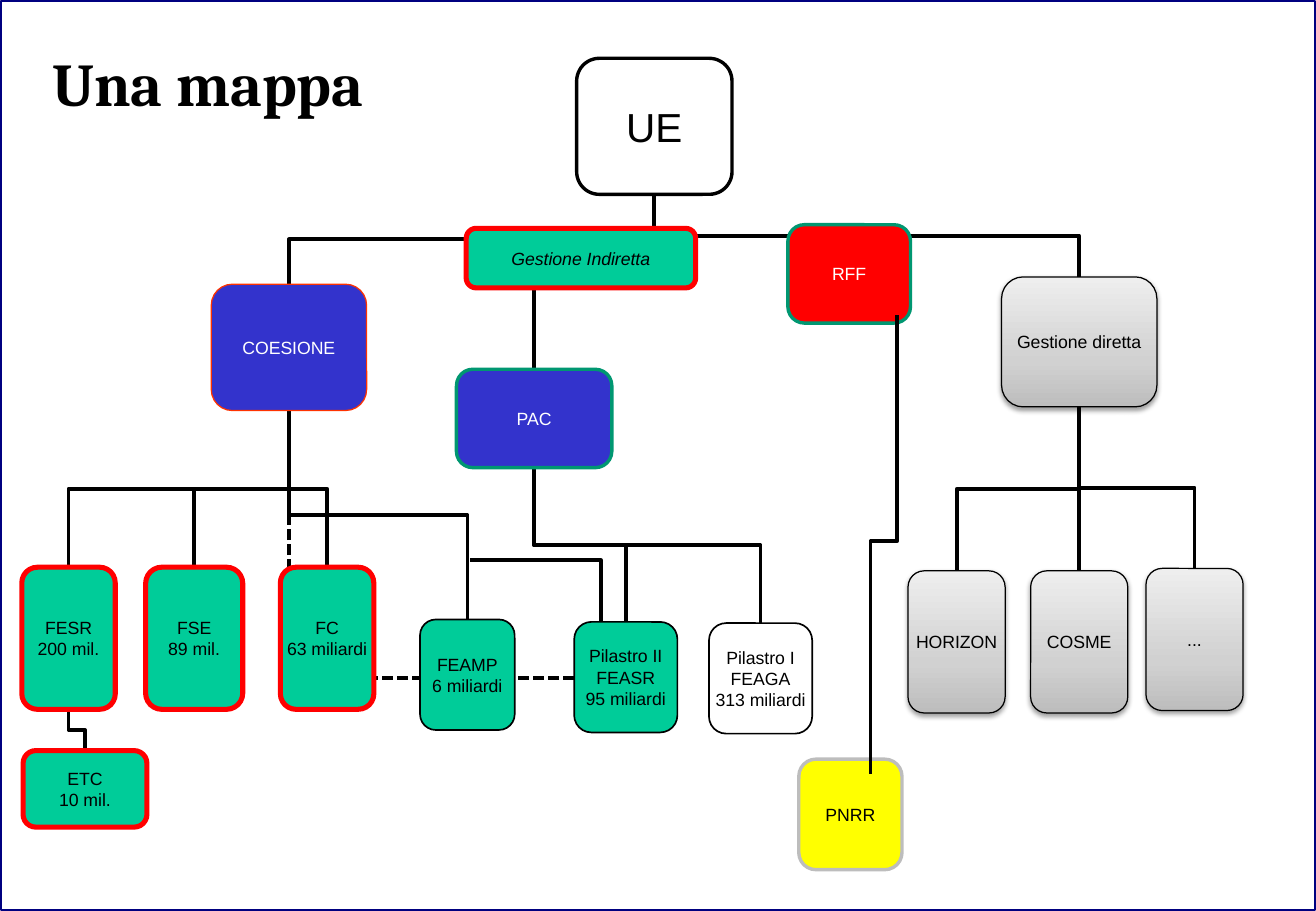
from copy import deepcopy
from dataclasses import dataclass

from lxml.etree import SubElement
from pptx import Presentation
from pptx.dml.color import RGBColor
from pptx.enum.dml import MSO_LINE
from pptx.enum.shapes import MSO_CONNECTOR, MSO_SHAPE
from pptx.enum.text import MSO_ANCHOR, MSO_AUTO_SIZE, PP_ALIGN
from pptx.oxml.ns import qn
from pptx.util import Inches, Pt


@dataclass(frozen=True)
class Theme:
    black: str = "000000"
    white: str = "FFFFFF"
    blue: str = "3333CC"
    green: str = "00CC99"
    teal: str = "009771"
    red: str = "FF0000"
    orange: str = "FF3300"
    yellow: str = "FFFF00"
    silver: str = "BDBDBD"
    navy: str = "000080"
    gradient: tuple = ((0, "BDBDBD"), (0.35, "D1D1D1"), (1, "EEEEEE"))
    title_font: str = "Cambria"
    body_font: str = "Arial"
    title_size: float = 36
    root_size: float = 24
    body_size: float = 10.5
    connector_width: float = 2.25


THEME = Theme()


@dataclass(frozen=True)
class Style:
    fill: str | tuple
    line: str
    width: float
    color: str = THEME.black
    size: float = THEME.body_size
    italic: bool = False


ROOT = Style(THEME.white, THEME.black, 2, size=THEME.root_size)
COHESION = Style(THEME.blue, THEME.orange, 0.75, THEME.white)
FARM_POLICY = Style(THEME.blue, THEME.teal, 2, THEME.white)
RECOVERY = Style(THEME.red, THEME.teal, 2, THEME.white)
RECOVERY_PLAN = Style(THEME.yellow, THEME.silver, 2)
DIRECT = Style(THEME.gradient, THEME.black, 0.75)
FUND = Style(THEME.green, THEME.red, 3)
INDIRECT = Style(THEME.green, THEME.red, 3, italic=True)
RURAL_FUND = Style(THEME.green, THEME.black, 1)
FARM_FUND = Style(THEME.white, THEME.black, 1)


@dataclass(frozen=True)
class Node:
    text: str
    left: float
    top: float
    width: float
    height: float
    style: Style
    parent: str = ""

    @property
    def head(self):
        return self.left + self.width / 2, self.top

    @property
    def foot(self):
        return self.left + self.width / 2, self.top + self.height


NODES = {
    "ue": Node("UE", 4.75, 0.48, 1.28, 1.12, ROOT),
    "coesione": Node("COESIONE", 1.74, 2.34, 1.28, 1.04, COHESION, "ue"),
    "diretta": Node("Gestione diretta", 8.25, 2.28, 1.28, 1.07, DIRECT, "ue"),
    "horizon": Node("HORIZON", 7.48, 4.7, 0.8, 1.17, DIRECT, "diretta"),
    "cosme": Node("COSME", 8.49, 4.7, 0.8, 1.17, DIRECT, "diretta"),
    "altri": Node("...", 9.44, 4.68, 0.8, 1.17, DIRECT, "diretta"),
    "fesr": Node("FESR\n200 mil.", 0.18, 4.67, 0.77, 1.17, FUND, "coesione"),
    "fse": Node("FSE\n89 mil.", 1.2, 4.67, 0.8, 1.17, FUND, "coesione"),
    "fc": Node("FC\n63 miliardi", 2.31, 4.67, 0.77, 1.17, FUND, "coesione"),
    "pac": Node("PAC", 3.76, 3.04, 1.28, 0.81, FARM_POLICY, "ue"),
    "feaga": Node("Pilastro I\nFEAGA\n313 miliardi", 5.84, 5.13, 0.85, 0.91, FARM_FUND, "pac"),
    "feasr": Node("Pilastro II\nFEASR\n95 miliardi", 4.73, 5.12, 0.85, 0.91, RURAL_FUND, "pac"),
    "feamp": Node("FEAMP\n6 miliardi", 3.46, 5.1, 0.78, 0.91, RURAL_FUND, "coesione"),
    "etc": Node("ETC\n10 mil.", 0.19, 6.18, 1.02, 0.63, FUND, "fesr"),
    "rff": Node("RFF", 6.49, 1.85, 1.01, 0.81, RECOVERY),
    "indiretta": Node("Gestione Indiretta", 3.84, 1.88, 1.89, 0.49, INDIRECT),
    "pnrr": Node("PNRR", 6.58, 6.25, 0.85, 0.91, RECOVERY_PLAN),
}


def rgb(value):
    return RGBColor.from_string(value)


def add_line(page, kind, start, end):
    points = [Inches(value) for value in (*start, *end)]
    line = page.shapes.add_connector(kind, *points)
    line.line.color.rgb = rgb(THEME.black)
    line.line.width = Pt(THEME.connector_width)
    SubElement(line.element.spPr, qn("a:effectLst"))
    return line


def add_elbow(page, start, end, bend=0.5):
    (start_x, start_y), (end_x, end_y) = start, end
    if abs(start_x - end_x) < 0.01:
        return add_line(page, MSO_CONNECTOR.STRAIGHT, start, end)
    middle_x, middle_y = (start_x + end_x) / 2, (start_y + end_y) / 2
    half_width, half_height = abs(start_y - end_y) / 2, abs(start_x - end_x) / 2
    rightward = end_x > start_x
    side = 1 if rightward else -1
    line = add_line(
        page,
        MSO_CONNECTOR.ELBOW,
        (middle_x + side * half_width, middle_y + half_height),
        (middle_x - side * half_width, middle_y - half_height),
    )
    properties = line.element.spPr
    properties.find(qn("a:xfrm")).set("rot", str((90 if rightward else 270) * 60000))
    guides = properties.find(qn("a:prstGeom")).get_or_add_avLst()
    SubElement(guides, qn("a:gd"), name="adj1", fmla=f"val {round(bend * 100000)}")
    return line


def add_dashed_corner(page, start, end):
    line = add_line(page, MSO_CONNECTOR.ELBOW, end, start)
    line.line.dash_style = MSO_LINE.SQUARE_DOT
    properties = line.element.spPr
    properties.find(qn("a:xfrm")).set("rot", str(180 * 60000))
    properties.find(qn("a:prstGeom")).set("prst", "bentConnector2")


def fill_gradient(box, colors):
    box.fill.gradient()
    box.fill.gradient_angle = 90
    stops = box.element.spPr.find(f".//{qn('a:gsLst')}")
    stops.append(deepcopy(stops[-1]))
    for stop, (position, color) in zip(box.fill.gradient_stops, colors):
        stop.position = position
        stop.color.rgb = rgb(color)


def add_shadow(box):
    effects = box.element.spPr.find(qn("a:effectLst"))
    shadow = SubElement(
        effects, qn("a:outerShdw"), blurRad=str(Pt(3.1)), dist=str(Pt(1.6)),
        dir=str(90 * 60000), rotWithShape="0",
    )
    color = SubElement(shadow, qn("a:srgbClr"), val=THEME.black)
    SubElement(color, qn("a:alpha"), val="38000")


def add_node(page, node):
    style = node.style
    area = [Inches(value) for value in (node.left, node.top, node.width, node.height)]
    box = page.shapes.add_shape(MSO_SHAPE.ROUNDED_RECTANGLE, *area)
    box.shadow.inherit = False
    box.line.color.rgb = rgb(style.line)
    box.line.width = Pt(style.width)
    if isinstance(style.fill, tuple):
        fill_gradient(box, style.fill)
        add_shadow(box)
    else:
        box.fill.solid()
        box.fill.fore_color.rgb = rgb(style.fill)
    frame = box.text_frame
    frame.word_wrap = False
    frame.vertical_anchor = MSO_ANCHOR.MIDDLE
    frame.margin_left = frame.margin_right = frame.margin_top = frame.margin_bottom = 0
    frame.text = node.text
    for para in frame.paragraphs:
        para.alignment = PP_ALIGN.CENTER
        para.font.name = THEME.body_font
        para.font.size = Pt(style.size)
        para.font.italic = style.italic
        para.font.color.rgb = rgb(style.color)


def add_title(page, text):
    title = page.shapes.title
    title.left, title.top = Inches(0.33), Inches(0.41)
    title.width, title.height = Inches(3.55), Inches(0.76)
    frame = title.text_frame
    frame.text = text
    frame.auto_size = MSO_AUTO_SIZE.NONE
    frame.vertical_anchor = MSO_ANCHOR.TOP
    para = frame.paragraphs[0]
    para.alignment = PP_ALIGN.LEFT
    para.line_spacing = 0.87
    para.font.name = THEME.title_font
    para.font.size = Pt(THEME.title_size)
    para.font.bold = True
    para.font.color.rgb = rgb(THEME.black)


def add_border(page):
    border = page.shapes.add_shape(
        MSO_SHAPE.RECTANGLE, Inches(0.01), Inches(0.01), Inches(10.82), Inches(7.48)
    )
    border.shadow.inherit = False
    border.fill.background()
    border.line.color.rgb = rgb(THEME.navy)
    border.line.width = Pt(1)


def main():
    deck = Presentation()
    deck.slide_width, deck.slide_height = Inches(10.84), Inches(7.5)
    page = deck.slides.add_slide(deck.slide_layouts[5])
    add_border(page)
    add_title(page, "Una mappa")
    add_dashed_corner(page, (4.73, 5.58), NODES["coesione"].foot)
    for node in NODES.values():
        if node.parent:
            add_elbow(page, node.head, NODES[node.parent].foot)
    add_elbow(page, (4.95, 5.11), (4.8, 4.6), 0.975)
    add_line(page, MSO_CONNECTOR.STRAIGHT, (4.8, 4.61), (3.87, 4.61))
    for node in NODES.values():
        add_node(page, node)
    add_elbow(page, (7.17, 6.37), (7.39, 2.59), 0.507)
    deck.save("out.pptx")


if __name__ == "__main__":
    main()
